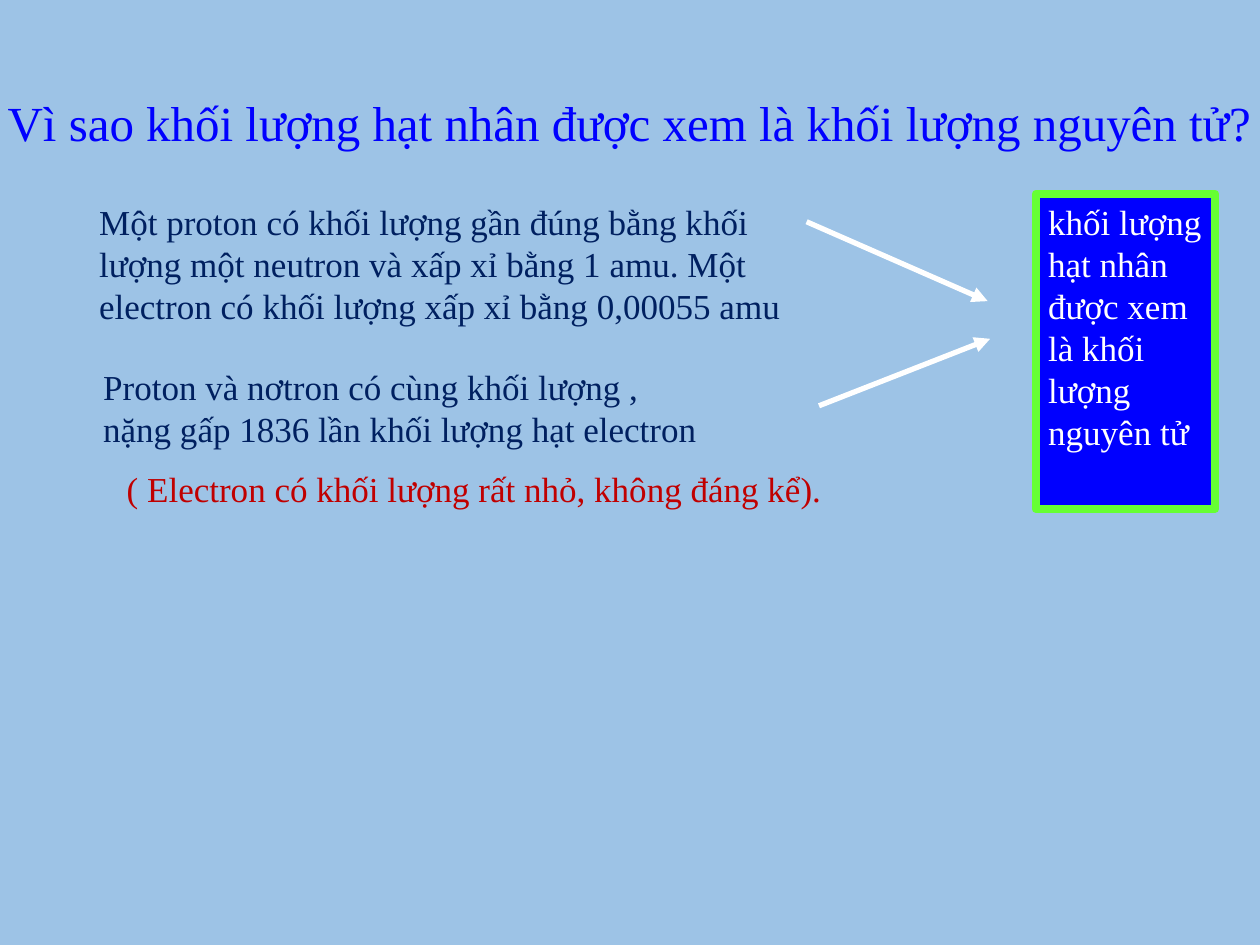
from dataclasses import dataclass

from lxml import etree
from pptx import Presentation
from pptx.dml.color import RGBColor
from pptx.enum.shapes import MSO_CONNECTOR, MSO_SHAPE
from pptx.enum.text import MSO_ANCHOR, MSO_AUTO_SIZE, PP_ALIGN
from pptx.oxml.ns import qn
from pptx.shapes.autoshape import Shape
from pptx.slide import Slide
from pptx.util import Cm, Pt

RECTANGLE = MSO_SHAPE.RECTANGLE
STRAIGHT = MSO_CONNECTOR.STRAIGHT
TOP = MSO_ANCHOR.TOP
LEFT = PP_ALIGN.LEFT
NO_AUTOFIT = MSO_AUTO_SIZE.NONE

FONT = "Times New Roman"
TITLE_SIZE = 28
BODY_SIZE = 20
TITLE_ONLY_LAYOUT = 5

SKY = RGBColor(0x9D, 0xC3, 0xE6)
BLUE = RGBColor(0x00, 0x00, 0xFF)
GREEN = RGBColor(0x66, 0xFF, 0x33)
WHITE = RGBColor(0xFF, 0xFF, 0xFF)
RED = RGBColor(0xC0, 0x00, 0x00)
NAVY = RGBColor(0x00, 0x20, 0x60)


@dataclass(frozen=True)
class Box:
    """Position and size in centimetres."""
    left: float
    top: float
    width: float
    height: float


@dataclass(frozen=True)
class Statement:
    box: Box
    text: str
    color: RGBColor


@dataclass(frozen=True)
class Arrow:
    """Start and end points in centimetres."""
    start: tuple[float, float]
    end: tuple[float, float]


TITLE = Statement(
    Box(-0.1, 1.73, 26.67, 1.45),
    "Vì sao khối lượng hạt nhân được xem là khối lượng nguyên tử?", BLUE)

CONCLUSION = Statement(
    Box(20.88, 3.91, 3.62, 6.35),
    "khối lượng hạt nhân được xem là khối lượng nguyên tử", WHITE)

REASONS = [
    Statement(
        Box(1.75, 3.91, 14.48, 2.82),
        "Một proton có khối lượng gần đúng bằng khối lượng một neutron và "
        "xấp xỉ bằng 1 amu. Một electron có khối lượng xấp xỉ bằng 0,00055 amu",
        NAVY),
    Statement(
        Box(1.83, 7.24, 12.7, 1.96),
        "Proton và nơtron có cùng khối lượng , nặng gấp 1836 lần "
        "khối lượng hạt electron",
        NAVY),
    Statement(
        Box(2.13, 9.3, 16.66, 1.12),
        " ( Electron có khối lượng rất nhỏ, không đáng kể).", RED),
]

ARROWS = [
    Arrow((16.26, 4.47), (19.91, 6.07)),
    Arrow((16.51, 8.18), (19.96, 6.83)),
]


def lengths(box: Box) -> tuple[Cm, Cm, Cm, Cm]:
    return Cm(box.left), Cm(box.top), Cm(box.width), Cm(box.height)


def write_statement(shape: Shape, statement: Statement, size: int) -> None:
    frame = shape.text_frame
    frame.word_wrap = True
    frame.auto_size = NO_AUTOFIT
    frame.vertical_anchor = TOP
    paragraph = frame.paragraphs[0]
    paragraph.alignment = LEFT
    run = paragraph.add_run()
    run.text = statement.text
    run.font.name = FONT
    run.font.size = Pt(size)
    run.font.color.rgb = statement.color


def add_title(slide: Slide, statement: Statement) -> None:
    title = slide.shapes.title
    title.left, title.top, title.width, title.height = lengths(statement.box)
    write_statement(title, statement, TITLE_SIZE)


def add_reason(slide: Slide, statement: Statement) -> None:
    text_box = slide.shapes.add_textbox(*lengths(statement.box))
    write_statement(text_box, statement, BODY_SIZE)


def add_conclusion(slide: Slide, statement: Statement) -> None:
    panel = slide.shapes.add_shape(RECTANGLE, *lengths(statement.box))
    panel.shadow.inherit = False
    panel.fill.solid()
    panel.fill.fore_color.rgb = BLUE
    panel.line.color.rgb = GREEN
    panel.line.width = Pt(4.5)
    write_statement(panel, statement, BODY_SIZE)


def add_arrow(slide: Slide, arrow: Arrow) -> None:
    points = [Cm(value) for value in (*arrow.start, *arrow.end)]
    connector = slide.shapes.add_connector(STRAIGHT, *points)
    connector.line.color.rgb = WHITE
    connector.line.width = Pt(3)
    line = connector.line._get_or_add_ln()
    etree.SubElement(line, qn("a:tailEnd"), type="triangle")
    etree.SubElement(connector._element.spPr, qn("a:effectLst"))


def main() -> None:
    presentation = Presentation()
    presentation.slide_width = Cm(25.4)
    presentation.slide_height = Cm(19.05)
    layout = presentation.slide_layouts[TITLE_ONLY_LAYOUT]
    slide = presentation.slides.add_slide(layout)
    slide.background.fill.solid()
    slide.background.fill.fore_color.rgb = SKY

    add_title(slide, TITLE)
    add_conclusion(slide, CONCLUSION)
    for arrow in ARROWS:
        add_arrow(slide, arrow)
    for reason in REASONS:
        add_reason(slide, reason)

    presentation.save("out.pptx")


if __name__ == "__main__":
    main()
